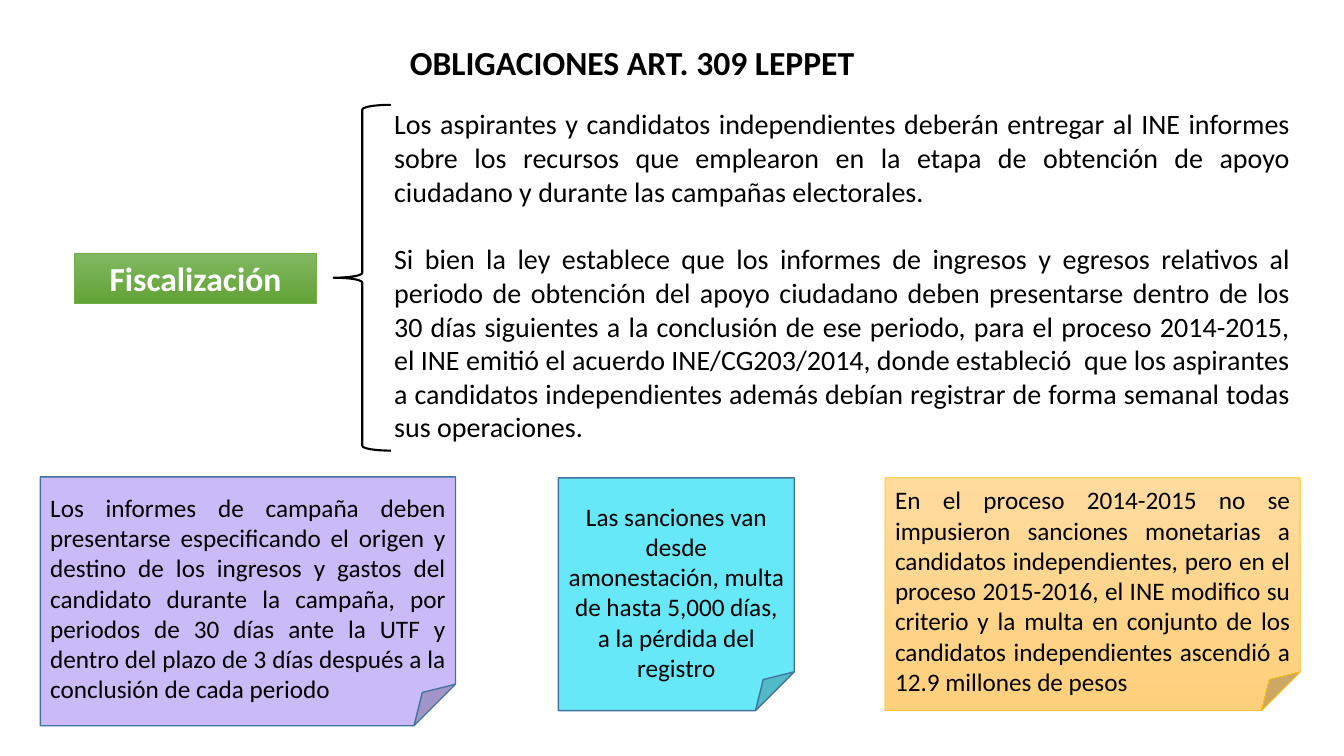
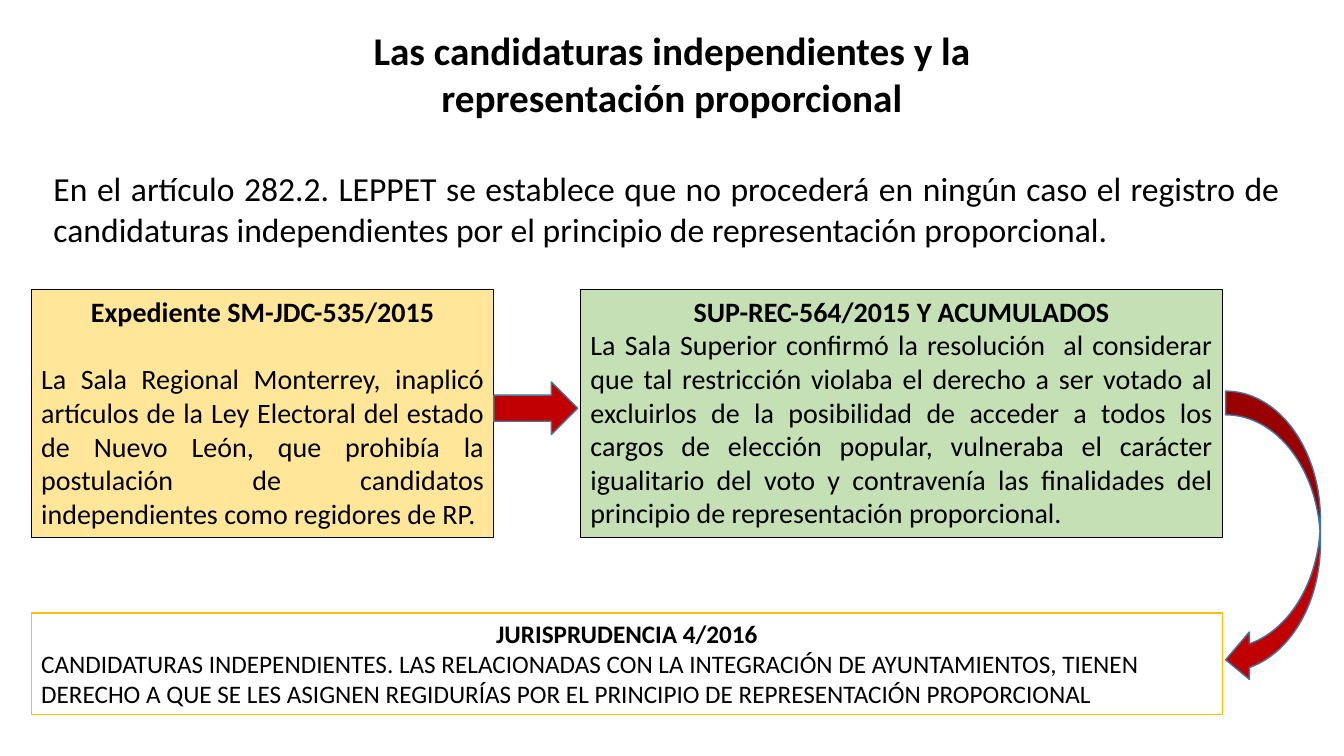
from lxml import etree
from pptx import Presentation
from pptx.dml.color import RGBColor
from pptx.enum.shapes import MSO_SHAPE
from pptx.enum.text import MSO_ANCHOR, MSO_AUTO_SIZE, PP_ALIGN
from pptx.oxml.ns import qn
from pptx.util import Pt

RECT, NOTE, BRACE = MSO_SHAPE.RECTANGLE, MSO_SHAPE.FOLDED_CORNER, MSO_SHAPE.LEFT_BRACE
ARROW, CURVED_ARROW = MSO_SHAPE.RIGHT_ARROW, MSO_SHAPE.CURVED_LEFT_ARROW
LEFT, CENTER, JUSTIFY = PP_ALIGN.LEFT, PP_ALIGN.CENTER, PP_ALIGN.JUSTIFY
TOP, NO_FIT = MSO_ANCHOR.TOP, MSO_AUTO_SIZE.NONE

FONT = "Calibri"
TITLE_AND_BODY = 1
BLACK = RGBColor(0x00, 0x00, 0x00)
WHITE = RGBColor(0xFF, 0xFF, 0xFF)
BLUE = RGBColor(0x43, 0x73, 0x9E)
RED = RGBColor(0xC0, 0x00, 0x00)
GOLD = RGBColor(0xFF, 0xC0, 0x00)
GREEN = RGBColor(0x70, 0xAD, 0x47)
GREEN_FADE = (RGBColor(0x81, 0xB8, 0x61), RGBColor(0x62, 0xA3, 0x36))
ORANGE_FADE = (RGBColor(0xFF, 0xDB, 0x9E), RGBColor(0xFF, 0xD0, 0x7C))
LILAC = RGBColor(0xCA, 0xBA, 0xF8)
CYAN = RGBColor(0x67, 0xE8, 0xF9)
SAND = RGBColor(0xFF, 0xE6, 0x99)
MINT = RGBColor(0xC5, 0xE0, 0xB4)

INSET_X, INSET_Y = 7.2, 3.6
LINE_GAP = 24.4


def para(text, align=JUSTIFY, bold=False, color=BLACK, before=0):
    return dict(text=text, align=align, bold=bold, color=color, before=before)


def heading(text, color=BLACK):
    return para(text, CENTER, True, color)


def shape(kind, at, fill, line, width, size=18, paras=(), top=INSET_Y):
    return dict(kind=kind, at=at, fill=fill, line=line, width=width,
                size=size, paras=paras, top=top)


SLIDES = [
    dict(
        title=("OBLIGACIONES ART. 309 LEPPET", 24, (279.4, 26.6, 344.2, 36)),
        body=(20, (274.3, 72.7, 654.5, 249.8), [
            para("Los aspirantes y candidatos independientes deberán entregar al INE "
                 "informes sobre los recursos que emplearon en la etapa de obtención de "
                 "apoyo ciudadano y durante las campañas electorales."),
            para("Si bien la ley establece que los informes de ingresos y egresos "
                 "relativos al periodo de obtención del apoyo ciudadano deben presentarse "
                 "dentro de los 30 días siguientes a la conclusión de ese periodo, para el "
                 "proceso 2014-2015, el INE emitió el acuerdo INE/CG203/2014, donde "
                 "estableció  que los aspirantes a candidatos independientes además debían "
                 "registrar de forma semanal todas sus operaciones.", before=LINE_GAP),
        ]),
        shapes=[
            shape(RECT, (53.3, 180.7, 172.8, 36), GREEN_FADE, GREEN, 0.5, 24,
                  [heading("Fiscalización", WHITE)]),
            shape(NOTE, (28.8, 340.6, 296.6, 177.8), LILAC, BLUE, 1, top=11, paras=[
                para("Los informes de campaña deben presentarse especificando el origen y "
                     "destino de los ingresos y gastos del candidato durante la campaña, "
                     "por periodos de 30 días ante la UTF y dentro del plazo de 3 días "
                     "después a la conclusión de cada periodo")]),
            shape(NOTE, (398.9, 341.3, 168.5, 166.3), CYAN, BLUE, 1, top=16.6, paras=[
                para("Las sanciones van desde amonestación, multa de hasta 5,000 días, "
                     "a la pérdida del registro", CENTER)]),
            shape(NOTE, (632.2, 341.3, 296.6, 166.3), ORANGE_FADE, GOLD, 0.5, top=5, paras=[
                para("En el proceso 2014-2015 no se impusieron sanciones monetarias a "
                     "candidatos independientes, pero en el proceso 2015-2016, el INE "
                     "modifico su criterio y la multa en conjunto de los candidatos "
                     "independientes ascendió a 12.9 millones de pesos")]),
            shape(BRACE, (238.3, 74.9, 41, 247), None, BLACK, 1.5),
        ],
    ),
    dict(
        title=("Las candidaturas independientes y la representación proporcional", 28,
               (192.2, 15.1, 575.3, 74.9)),
        body=(24, (31, 116.6, 890.6, 65.5), [
            para("En el artículo 282.2. LEPPET se establece que no procederá en ningún "
                 "caso el registro de candidaturas independientes por el principio de "
                 "representación proporcional."),
        ]),
        shapes=[
            shape(RECT, (22.3, 206.6, 330.5, 177.1), SAND, BLACK, 0.75, 20, [
                heading("Expediente SM-JDC-535/2015"),
                para("La Sala Regional Monterrey, inaplicó artículos de la Ley Electoral "
                     "del estado de Nuevo León, que prohibía la postulación de candidatos "
                     "independientes como regidores de RP.", before=LINE_GAP)]),
            shape(RECT, (414.7, 206.6, 458.6, 177.1), MINT, BLACK, 0.75, 20, [
                heading("SUP-REC-564/2015 Y ACUMULADOS"),
                para("La Sala Superior confirmó la resolución  al considerar que tal "
                     "restricción violaba el derecho a ser votado al excluirlos de la "
                     "posibilidad de acceder a todos los cargos de elección popular, "
                     "vulneraba el carácter igualitario del voto y contravenía las "
                     "finalidades del principio de representación proporcional.")]),
            shape(RECT, (22.3, 437.8, 851, 72.7), WHITE, GOLD, 1, 18, [
                heading("JURISPRUDENCIA 4/2016"),
                para("CANDIDATURAS INDEPENDIENTES. LAS RELACIONADAS CON LA INTEGRACIÓN DE "
                     "AYUNTAMIENTOS, TIENEN DERECHO A QUE SE LES ASIGNEN REGIDURÍAS POR EL "
                     "PRINCIPIO DE REPRESENTACIÓN PROPORCIONAL", LEFT)]),
            shape(ARROW, (352.8, 272.9, 59.8, 37.4), RED, BLUE, 1),
            shape(CURVED_ARROW, (875.5, 279.4, 67.7, 208.8), RED, BLUE, 1),
        ],
    ),
]


def write(tf, paras, size, top=INSET_Y):
    tf.word_wrap = True
    tf.auto_size = NO_FIT
    tf.vertical_anchor = TOP
    tf.margin_left = tf.margin_right = Pt(INSET_X)
    tf.margin_top, tf.margin_bottom = Pt(top), Pt(INSET_Y)
    for i, item in enumerate(paras):
        p = tf.paragraphs[0] if i == 0 else tf.add_paragraph()
        p.alignment = item["align"]
        p.space_before, p.space_after = Pt(item["before"]), Pt(0)
        r = p.add_run()
        r.text = item["text"]
        r.font.name, r.font.size = FONT, Pt(size)
        r.font.bold, r.font.color.rgb = item["bold"], item["color"]


def fill_placeholder(ph, at, size, paras):
    ph.left, ph.top, ph.width, ph.height = map(Pt, at)
    write(ph.text_frame, paras, size)


def remove_bullets(tf):
    for p in tf.paragraphs:
        props = p._p.get_or_add_pPr()
        props.set("marL", "0")
        props.set("indent", "0")
        etree.SubElement(props, qn("a:buNone"))


def paint(fill, colors):
    if colors is None:
        fill.background()
    elif isinstance(colors, RGBColor):
        fill.solid()
        fill.fore_color.rgb = colors
    else:
        fill.gradient()
        fill.gradient_angle = 270
        for stop, color in zip(fill.gradient_stops, colors):
            stop.color.rgb = color


def add_figure(s, item):
    sp = s.shapes.add_shape(item["kind"], *map(Pt, item["at"]))
    sp.shadow.inherit = False
    paint(sp.fill, item["fill"])
    sp.line.color.rgb, sp.line.width = item["line"], Pt(item["width"])
    if item["paras"]:
        write(sp.text_frame, item["paras"], item["size"], item["top"])


def add_slide(prs, content):
    s = prs.slides.add_slide(prs.slide_layouts[TITLE_AND_BODY])
    text, size, at = content["title"]
    fill_placeholder(s.shapes.title, at, size, [heading(text)])
    size, at, paras = content["body"]
    body = s.placeholders[1]
    fill_placeholder(body, at, size, paras)
    remove_bullets(body.text_frame)
    for item in content["shapes"]:
        add_figure(s, item)


def main():
    prs = Presentation()
    prs.slide_width, prs.slide_height = Pt(960), Pt(540)
    for content in SLIDES:
        add_slide(prs, content)
    prs.save("out.pptx")


if __name__ == "__main__":
    main()
